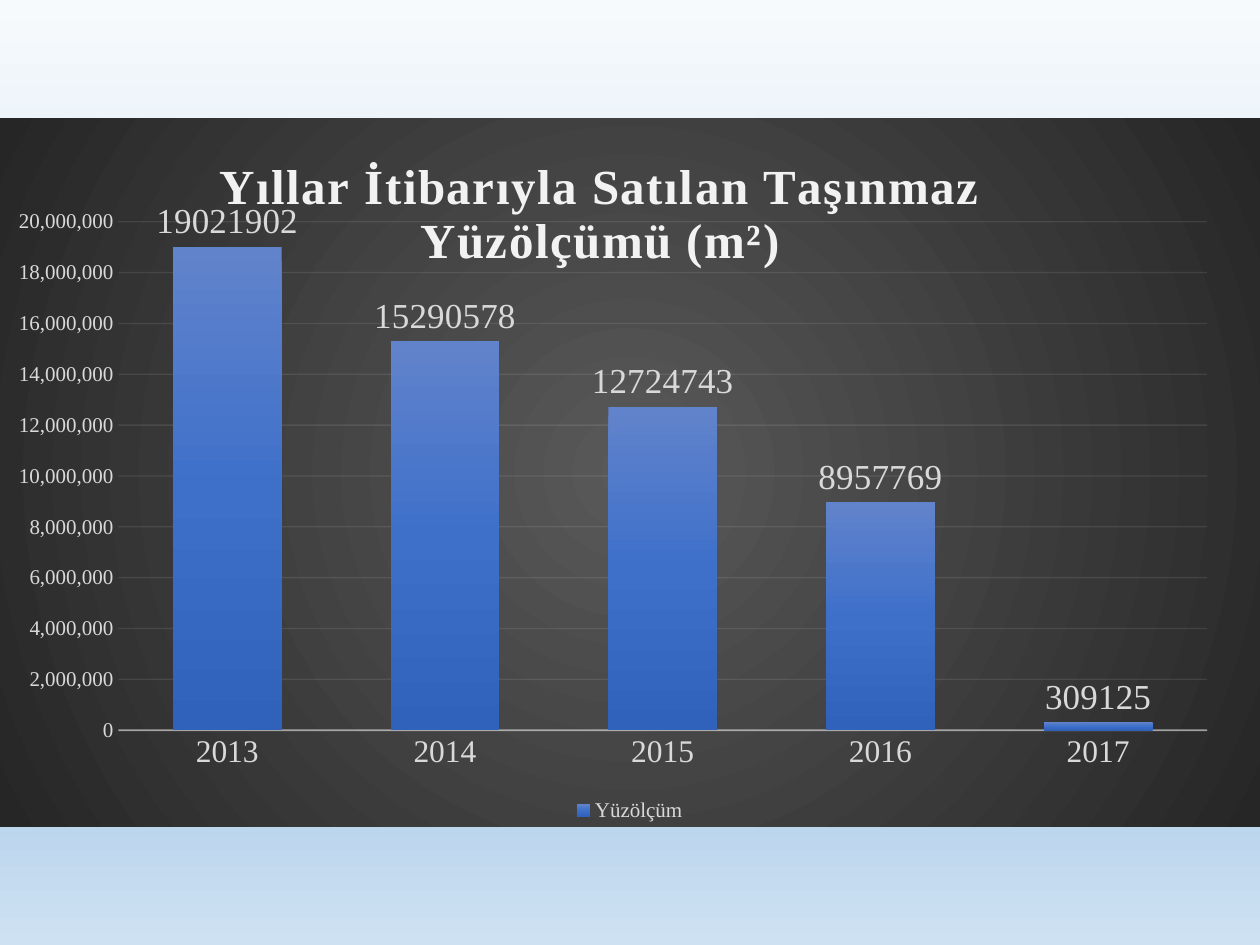
from lxml import etree
from pptx import Presentation
from pptx.chart.data import CategoryChartData
from pptx.dml.color import RGBColor
from pptx.enum.chart import XL_CHART_TYPE, XL_LABEL_POSITION, XL_LEGEND_POSITION, XL_TICK_MARK
from pptx.oxml import parse_xml
from pptx.oxml.ns import nsdecls, qn
from pptx.util import Inches, Pt

COLUMNS = XL_CHART_TYPE.COLUMN_CLUSTERED
OUTSIDE_END = XL_LABEL_POSITION.OUTSIDE_END
BOTTOM = XL_LEGEND_POSITION.BOTTOM
NO_TICK = XL_TICK_MARK.NONE

# Content
TITLE = "Yıllar İtibarıyla Satılan Taşınmaz Yüzölçümü (m²)"
SERIES_NAME = "Yüzölçüm"
AREA_BY_YEAR = {
    "2013": 19021902,
    "2014": 15290578,
    "2015": 12724743,
    "2016": 8957769,
    "2017": 309125,
}

# Look
FONT = "Times New Roman"
PALE, LIGHT = "F2F2F2", "D9D9D9"
DOWNWARD = '<a:lin ang="5400000" scaled="0"/>'
FROM_CENTRE = ('<a:path path="circle"><a:fillToRect l="50000" t="50000" '
               'r="50000" b="50000"/></a:path>')
SKY = [(0, "F7FAFD"), (74, "B5D2EC"), (83, "B5D2EC"), (100, "CEE1F2")]
CHARCOAL = [(0, "595959"), (100, "262626")]
BLUE = [(0, "6183CB"), (50, "3E70CA"), (100, "3062BB")]
TITLE_PLACE = {"x": 0.167, "y": 0.04}
PLOT_PLACE = {"x": 0.094, "y": 0.146, "w": 0.864, "h": 0.718}


def colour(value):
    return RGBColor.from_string(value)


def style_font(font, size, value=LIGHT, bold=False):
    formats = {"name": FONT, "size": Pt(size), "bold": bold}
    for name, setting in formats.items():
        setattr(font, name, setting)
    font.color.rgb = colour(value)


def style_line(line, width, opacity):
    line.width = Pt(width)
    line.color.rgb = colour(PALE)
    solid = line.fill._xPr.find(qn("a:solidFill"))
    etree.SubElement(solid[0], qn("a:alpha")).set("val", str(opacity * 1000))


def gradient(stops, direction):
    stop_xml = "".join(
        f'<a:gs pos="{position * 1000}"><a:srgbClr val="{value}"/></a:gs>'
        for position, value in stops)
    return parse_xml(f'<a:gradFill {nsdecls("a")} rotWithShape="1">'
                     f'<a:gsLst>{stop_xml}</a:gsLst>{direction}</a:gradFill>')


def fill_gradient(fill, stops, direction):
    fill.solid()
    parent = fill._xPr
    parent.replace(parent.find(qn("a:solidFill")), gradient(stops, direction))


def manual_layout(place, target=""):
    modes = "".join(f'<c:{key}Mode val="edge"/>' for key in "xy")
    values = "".join(f'<c:{key} val="{value}"/>' for key, value in place.items())
    return parse_xml(f'<c:layout {nsdecls("c")}><c:manualLayout>'
                     f'{target}{modes}{values}</c:manualLayout></c:layout>')


def place_part(element, layout, after=None):
    for old in element.findall(qn("c:layout")):
        element.remove(old)
    if after is None:
        element.insert(0, layout)
    else:
        element.find(qn(after)).addnext(layout)


presentation = Presentation()
presentation.slide_width, presentation.slide_height = Inches(10), Inches(7.5)
slide = presentation.slides.add_slide(presentation.slide_layouts[6])
fill_gradient(slide.background.fill, SKY, DOWNWARD)

# Chart and its dark panel
data = CategoryChartData(number_format="General")
data.categories = list(AREA_BY_YEAR)
data.add_series(SERIES_NAME, list(AREA_BY_YEAR.values()))
chart = slide.shapes.add_chart(
    COLUMNS, 0, Inches(0.94), Inches(10), Inches(5.62), data).chart
style_font(chart.font, 12)
chart_space = chart._chartSpace
panel = parse_xml(f'<c:spPr {nsdecls("c", "a")}><a:ln><a:noFill/></a:ln></c:spPr>')
panel.insert(0, gradient(CHARCOAL, FROM_CENTRE))
chart_space.find(qn("c:chart")).addnext(panel)

# Title
chart.has_title = True
title_frame = chart.chart_title.text_frame
title_frame.text = TITLE
run = title_frame.paragraphs[0].runs[0]
style_font(run.font, 28, PALE, True)
run.font._element.set("spc", "100")
place_part(chart.chart_title._element, manual_layout(TITLE_PLACE), "c:tx")

# Plot and columns
plot = chart.plots[0]
plot.gap_width, plot.overlap = 100, -24
plot.vary_by_categories = False
place_part(chart_space.find(".//" + qn("c:plotArea")),
           manual_layout(PLOT_PLACE, '<c:layoutTarget val="inner"/>'))
fill_gradient(plot.series[0].format.fill, BLUE, DOWNWARD)

# Value labels
plot.has_data_labels = True
label_formats = {"show_value": True, "position": OUTSIDE_END,
                 "number_format": "0", "number_format_is_linked": False}
for name, setting in label_formats.items():
    setattr(plot.data_labels, name, setting)
style_font(plot.data_labels.font, 20)

# Axes
year_axis, area_axis = chart.category_axis, chart.value_axis
for axis, size in ((year_axis, 18), (area_axis, 12)):
    axis.major_tick_mark = axis.minor_tick_mark = NO_TICK
    style_font(axis.tick_labels.font, size)
style_line(year_axis.format.line, 1, 54)
area_axis.format.line.fill.background()
area_axis.minimum_scale, area_axis.maximum_scale = 0, 20_000_000
area_axis.major_unit = 2_000_000
area_axis.tick_labels.number_format = "#,##0"
area_axis.tick_labels.number_format_is_linked = False
style_line(area_axis.major_gridlines.format.line, 0.75, 10)

# Legend
chart.has_legend = True
chart.legend.position = BOTTOM
chart.legend.include_in_layout = False
style_font(chart.legend.font, 12)

presentation.save("out.pptx")
